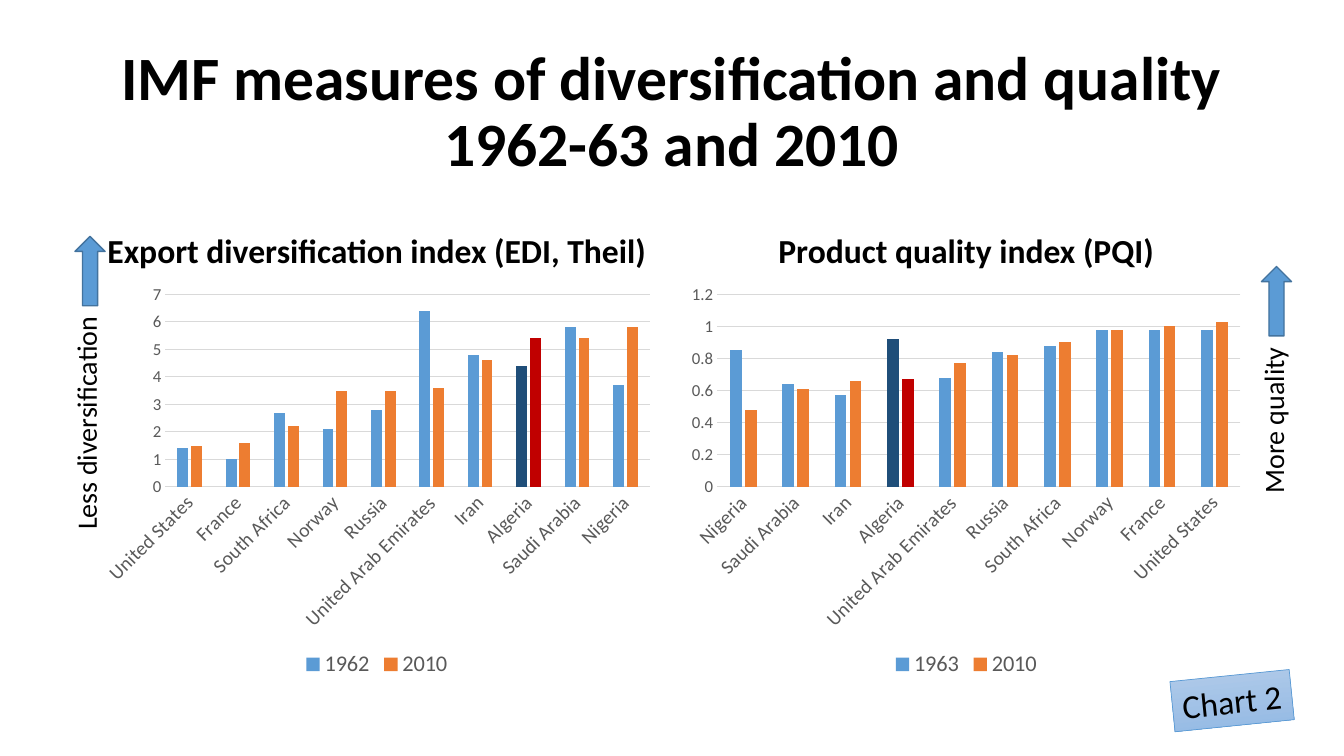
from dataclasses import dataclass

from pptx import Presentation
from pptx.chart.data import CategoryChartData
from pptx.dml.color import RGBColor
from pptx.enum.chart import XL_CHART_TYPE, XL_LEGEND_POSITION, XL_TICK_MARK
from pptx.enum.shapes import MSO_SHAPE
from pptx.enum.text import MSO_ANCHOR, MSO_AUTO_SIZE, PP_ALIGN
from pptx.util import Cm, Pt

FONT = "Calibri"
BLUE, ORANGE, GRID, GREY = "5B9BD5", "ED7D31", "D9D9D9", "595959"
HIGHLIGHT = "Algeria"


@dataclass
class Panel:
    heading: str
    placeholder: int
    left: float
    width: float
    countries: list[str]
    series: dict[str, list[float]]
    top_value: float
    step: float


@dataclass
class Direction:
    """Vertical label with an arrow above it, placed by centres in cm."""
    text: str
    label_x: float
    label_y: float
    length: float
    arrow_x: float
    arrow_y: float


PANELS = [
    Panel("Export diversification index (EDI, Theil)", 1, 2.33, 14.33,
          ["United States", "France", "South Africa", "Norway", "Russia",
           "United Arab Emirates", "Iran", "Algeria", "Saudi Arabia", "Nigeria"],
          {"1962": [1.4, 1, 2.7, 2.1, 2.8, 6.4, 4.8, 4.4, 5.8, 3.7],
           "2010": [1.5, 1.6, 2.2, 3.5, 3.5, 3.6, 4.6, 5.4, 5.4, 5.8]}, 7, 1),
    Panel("Product quality index (PQI)", 3, 17.15, 14.4,
          ["Nigeria", "Saudi Arabia", "Iran", "Algeria", "United Arab Emirates",
           "Russia", "South Africa", "Norway", "France", "United States"],
          {"1963": [0.85, 0.64, 0.57, 0.92, 0.68, 0.84, 0.88, 0.98, 0.98, 0.98],
           "2010": [0.48, 0.61, 0.66, 0.67, 0.77, 0.82, 0.9, 0.98, 1, 1.03]}, 1.2, 0.2),
]
DIRECTIONS = [
    Direction("Less diversification", 2.17, 10.54, 6.12, 2.27, 6.83),
    Direction("More quality", 32.09, 10.57, 4.24, 32.17, 7.59),
]


def rgb(code: str) -> RGBColor:
    return RGBColor.from_string(code)


def style_font(font, size: float, color: str = "000000", bold: bool = False) -> None:
    font.name, font.size, font.bold = FONT, Pt(size), bold
    font.color.rgb = rgb(color)


def place(sp, left: float, top: float, width: float, height: float) -> None:
    sp.left, sp.top, sp.width, sp.height = Cm(left), Cm(top), Cm(width), Cm(height)


def centred(x: float, y: float, width: float, height: float) -> list:
    return [Cm(x - width / 2), Cm(y - height / 2), Cm(width), Cm(height)]


def write(sp, text: str, *, size: float, bold: bool = False, align=PP_ALIGN.LEFT,
          anchor=MSO_ANCHOR.TOP, wrap: bool = False, fit=MSO_AUTO_SIZE.SHAPE_TO_FIT_TEXT,
          spacing: float = 1.0, before: float = 0) -> None:
    tf = sp.text_frame
    tf.word_wrap, tf.auto_size, tf.vertical_anchor = wrap, fit, anchor
    p = tf.paragraphs[0]
    p.alignment, p.line_spacing, p.space_before = align, spacing, Pt(before)
    r = p.add_run()
    r.text = text
    style_font(r.font, size, bold=bold)


def write_heading(sp, text: str, size: float, anchor, before: float = 0) -> None:
    write(sp, text, size=size, bold=True, align=PP_ALIGN.CENTER, anchor=anchor,
          wrap=True, fit=MSO_AUTO_SIZE.NONE, spacing=0.9, before=before)


def add_panel(s, panel: Panel) -> None:
    heading = s.placeholders[panel.placeholder]
    place(heading, panel.left, 4.67, panel.width, 2.29)
    write_heading(heading, panel.heading, 24, MSO_ANCHOR.BOTTOM, before=10)

    data = CategoryChartData()
    data.categories = panel.countries
    for name, values in panel.series.items():
        data.add_series(name, values)
    chart = s.shapes.add_chart(XL_CHART_TYPE.COLUMN_CLUSTERED, Cm(panel.left), Cm(6.96),
                               Cm(panel.width), Cm(10.24), data).chart
    chart.has_title = False
    style_font(chart.font, 10)
    chart.has_legend = True
    chart.legend.position = XL_LEGEND_POSITION.BOTTOM
    chart.legend.include_in_layout = False
    style_font(chart.legend.font, 16, GREY)

    # Columns, with one country in darker colours
    plot = chart.plots[0]
    plot.gap_width, plot.overlap, plot.vary_by_categories = 219, -27, False
    special = panel.countries.index(HIGHLIGHT)
    for series, color, dark in zip(plot.series, (BLUE, ORANGE), ("1F4E79", "C00000")):
        for part, code in ((series, color), (series.points[special], dark)):
            part.format.fill.solid()
            part.format.fill.fore_color.rgb = rgb(code)

    # Axes
    cat, val = chart.category_axis, chart.value_axis
    for axis, size in ((cat, 14), (val, 12)):
        axis.major_tick_mark = axis.minor_tick_mark = XL_TICK_MARK.NONE
        style_font(axis.tick_labels.font, size, GREY)
    cat._element.xpath("c:txPr/a:bodyPr")[0].set("rot", "-2700000")
    val.minimum_scale, val.maximum_scale, val.major_unit = 0, panel.top_value, panel.step
    val.tick_labels.number_format = "General"
    val.tick_labels.number_format_is_linked = False
    val.format.line.fill.background()
    for line in (cat.format.line, val.major_gridlines.format.line):
        line.color.rgb, line.width = rgb(GRID), Pt(0.75)


def add_direction(s, d: Direction) -> None:
    label = s.shapes.add_textbox(*centred(d.label_x, d.label_y, d.length, 1.12))
    write(label, d.text, size=20)
    arrow = s.shapes.add_shape(MSO_SHAPE.RIGHT_ARROW,
                               *centred(d.arrow_x, d.arrow_y, 1.75, 0.76))
    label.rotation = arrow.rotation = 270
    arrow.shadow.inherit = False
    arrow.fill.solid()
    arrow.fill.fore_color.rgb = rgb(BLUE)
    arrow.line.color.rgb, arrow.line.width = rgb("43739E"), Pt(1)


def add_badge(s, text: str) -> None:
    sp = s.shapes.add_shape(MSO_SHAPE.RECTANGLE, Cm(29.54), Cm(17.02), Cm(3.02), Cm(1.27))
    sp.rotation = 354.2
    sp.shadow.inherit = False
    sp.fill.gradient()
    sp.fill.gradient_angle = 270
    for stop, (position, code) in zip(sp.fill.gradient_stops, ((0, "B1CBE9"), (1, "93B9E4"))):
        stop.position, stop.color.rgb = position, rgb(code)
    sp.line.color.rgb, sp.line.width = rgb(BLUE), Pt(0.5)
    write(sp, text, size=24)


def main() -> None:
    prs = Presentation()
    prs.slide_width, prs.slide_height = Cm(33.87), Cm(19.05)
    s = prs.slides.add_slide(prs.slide_layouts.get_by_name("Comparison"))

    # Title
    title = s.shapes.title
    place(title, 2.33, 1.02, 29.21, 3.68)
    write_heading(title, "IMF measures of diversification and quality 1962-63 and 2010",
                  44, MSO_ANCHOR.MIDDLE)

    # Charts with their headings
    for panel in PANELS:
        add_panel(s, panel)

    # Reading directions and badge
    for d in DIRECTIONS:
        add_direction(s, d)
    add_badge(s, "Chart 2")

    # Unused placeholders
    for ph in list(s.placeholders):
        if not ph.text_frame.text:
            ph.element.getparent().remove(ph.element)

    prs.save("out.pptx")


if __name__ == "__main__":
    main()
